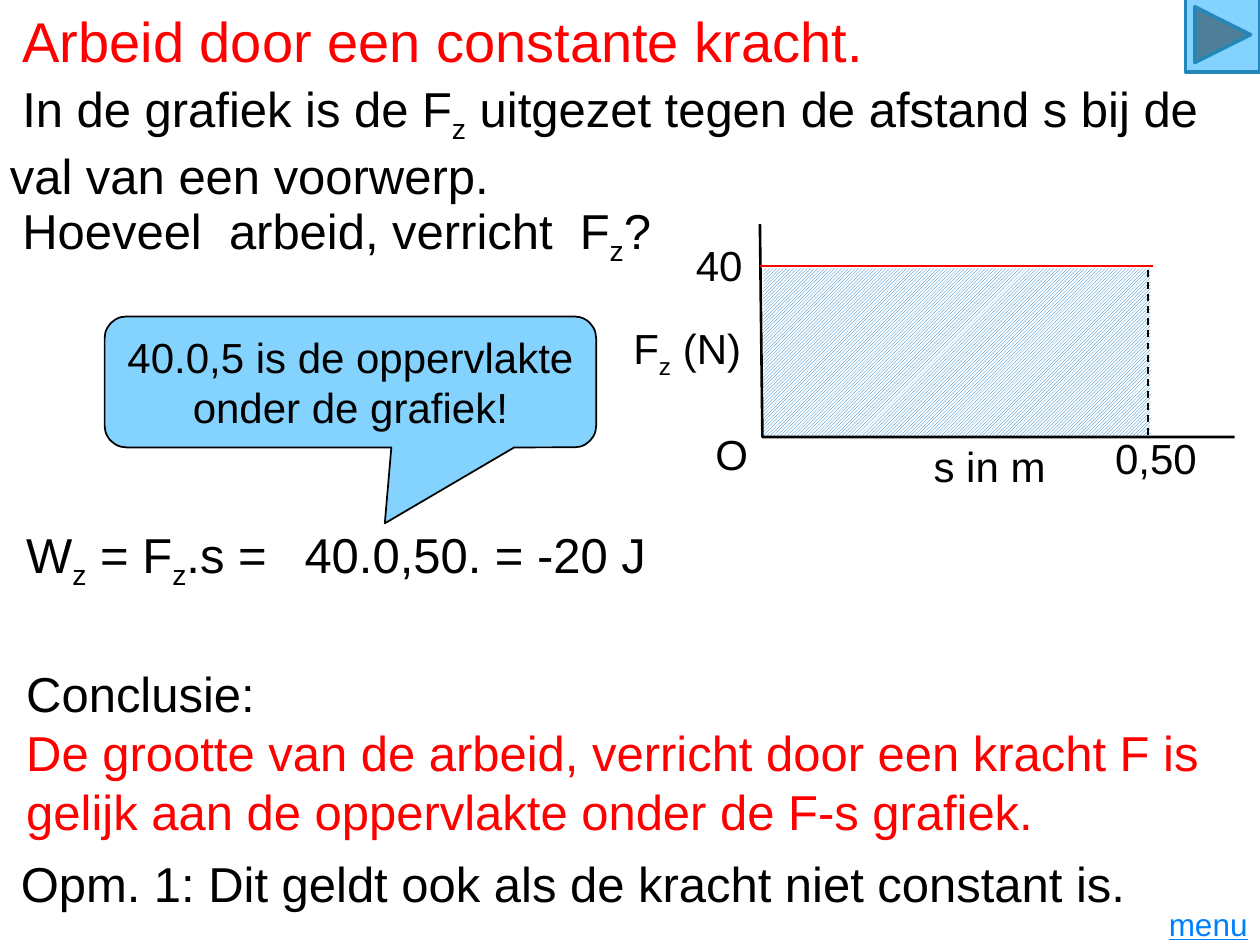
"""Build the slide on work done by a constant force."""
from dataclasses import dataclass

from lxml import etree
from pptx import Presentation
from pptx.dml.color import RGBColor
from pptx.enum.dml import MSO_LINE, MSO_PATTERN
from pptx.enum.shapes import MSO_CONNECTOR, MSO_SHAPE
from pptx.enum.text import MSO_ANCHOR, MSO_AUTO_SIZE, PP_ALIGN
from pptx.oxml.ns import qn
from pptx.util import Cm, Length, Pt

LEFT, CENTER, RIGHT = PP_ALIGN.LEFT, PP_ALIGN.CENTER, PP_ALIGN.RIGHT
TOP, MIDDLE = MSO_ANCHOR.TOP, MSO_ANCHOR.MIDDLE
GROW = MSO_AUTO_SIZE.SHAPE_TO_FIT_TEXT
HATCH = MSO_PATTERN.LIGHT_UPWARD_DIAGONAL
DASH = MSO_LINE.DASH
STRAIGHT = MSO_CONNECTOR.STRAIGHT
RECTANGLE = MSO_SHAPE.RECTANGLE
CALLOUT = MSO_SHAPE.ROUNDED_RECTANGULAR_CALLOUT
FORWARD = MSO_SHAPE.ACTION_BUTTON_FORWARD_OR_NEXT
TITLE_ONLY = 5


@dataclass(frozen=True)
class Theme:
    """Fonts, type sizes and colours of the slide."""

    font: str = "Arial"
    title: Length = Pt(32)
    body: Length = Pt(28)
    label: Length = Pt(24)
    link: Length = Pt(18)
    indent: Length = Cm(0.25)
    black: RGBColor = RGBColor(0, 0, 0)
    white: RGBColor = RGBColor(255, 255, 255)
    red: RGBColor = RGBColor(255, 0, 0)
    hatch: RGBColor = RGBColor(0x00, 0x70, 0xC0)
    sky: RGBColor = RGBColor(0x83, 0xD3, 0xFE)
    edge: RGBColor = RGBColor(0x24, 0x87, 0xBB)
    menu: RGBColor = RGBColor(0x00, 0x80, 0xFF)


THEME = Theme()


@dataclass(frozen=True)
class Box:
    """Position and size in centimetres."""

    left: float
    top: float
    width: float
    height: float

    def lengths(self) -> tuple[Length, ...]:
        """Return the box as slide lengths."""
        return Cm(self.left), Cm(self.top), Cm(self.width), Cm(self.height)


@dataclass(frozen=True)
class Line:
    """A paragraph, with subscripts between underscores."""

    text: str
    color: RGBColor = THEME.black
    size: Length = THEME.body
    align: PP_ALIGN = LEFT
    indent: Length = THEME.indent
    underline: bool = False


@dataclass(frozen=True)
class TextBlock:
    """A text box and its paragraphs."""

    box: Box
    lines: tuple[Line, ...]


def label(left: float, top: float, width: float, text: str, align: PP_ALIGN = LEFT) -> TextBlock:
    """Describe one label of the graph."""
    line = Line(text, size=THEME.label, align=align, indent=Cm(0))
    return TextBlock(Box(left, top, width, 1.27), (line,))


TITLE = Line("Arbeid door een constante kracht.", THEME.red, THEME.title)
CALLOUT_LINE = Line("40.0,5 is de oppervlakte onder de grafiek!",
                    size=THEME.label, align=CENTER, indent=Cm(0))
TEXT_BLOCKS = (
    TextBlock(Box(-0.05, 3.91, 14.3, 1.45), (Line("Hoeveel  arbeid, verricht  F_z_?"),)),
    TextBlock(Box(-0.05, 1.45, 25.45, 2.64), (
        Line("In de grafiek is de F_z_ uitgezet tegen de afstand s bij de val van een voorwerp."),)),
    TextBlock(Box(0.03, 10.44, 8.81, 1.45), (Line("W_z_ = F_z_.s ="),)),
    TextBlock(Box(5.89, 10.44, 11.73, 1.45), (Line("40.0,50. = -20 J", indent=Cm(0)),)),
    TextBlock(Box(0.03, 13.26, 25.45, 3.84), (
        Line("Conclusie:"),
        Line("De grootte van de arbeid, verricht door een kracht F is", THEME.red),
        Line("gelijk aan de oppervlakte onder de F-s grafiek.", THEME.red))),
    TextBlock(Box(-0.08, 17.09, 23.47, 1.45), (
        Line("Opm. 1: Dit geldt ook als de kracht niet constant is."),)),
    label(12.19, 6.38, 3, "F_z_ (N)", RIGHT),
    label(18.57, 8.76, 3.23, "s in m"),
    label(11.99, 4.7, 3.23, "40", RIGHT),
    label(22.23, 8.59, 2.67, "0,50"),
    label(14.17, 8.51, 3.23, "O"),
    TextBlock(Box(22.71, 18.11, 2.69, 1.02), (
        Line("menu", THEME.menu, THEME.link, RIGHT, Cm(0), True),)),
)


def write_lines(frame, lines: tuple[Line, ...], anchor: MSO_ANCHOR = TOP) -> None:
    """Fill a text frame with formatted paragraphs."""
    frame.word_wrap = True
    frame.auto_size = GROW
    frame.vertical_anchor = anchor
    for index, line in enumerate(lines):
        paragraph = frame.add_paragraph() if index else frame.paragraphs[0]
        paragraph.alignment = line.align
        paragraph._p.get_or_add_pPr().set("indent", str(line.indent))
        font = paragraph.font
        font.name, font.size, font.color.rgb = THEME.font, line.size, line.color
        if line.underline:
            font.underline = True
        for position, part in enumerate(line.text.split("_")):
            run = paragraph.add_run()
            run.text = part
            if position % 2:
                run._r.get_or_add_rPr().set("baseline", "-25000")


def add_filled_shape(slide, kind: MSO_SHAPE, box: Box, edge: RGBColor, width: Length):
    """Add a sky-blue preset shape with an outline."""
    shape = slide.shapes.add_shape(kind, *box.lengths())
    shape.shadow.inherit = False
    shape.fill.solid()
    shape.fill.fore_color.rgb = THEME.sky
    shape.line.color.rgb = edge
    shape.line.width = width
    return shape


def add_guide(slide, start: tuple[float, float], end: tuple[float, float], color: RGBColor):
    """Add a thin straight line of the graph."""
    guide = slide.shapes.add_connector(STRAIGHT, *map(Cm, start + end))
    guide.line.color.rgb = color
    guide.line.width = Pt(1)
    etree.SubElement(guide._element.spPr, qn("a:effectLst"))
    return guide


def add_graph(slide) -> None:
    """Draw the hatched area, the axes and the guides."""
    area = slide.shapes.add_shape(RECTANGLE, *Box(15.39, 5.41, 7.8, 3.4).lengths())
    area.shadow.inherit = False
    area.fill.patterned()
    area.fill.pattern = HATCH
    area.fill.fore_color.rgb = THEME.hatch
    area.fill.back_color.rgb = THEME.white
    area.line.fill.background()

    builder = slide.shapes.build_freeform(Cm(15.32), Cm(4.52))
    corners = ((15.37, 8.81), (24.89, 8.81))
    builder.add_line_segments([(Cm(x), Cm(y)) for x, y in corners], close=False)
    axes = builder.convert_to_shape()
    axes.shadow.inherit = False
    axes.fill.background()
    axes.line.color.rgb = THEME.black
    axes.line.width = Pt(1.5)

    add_guide(slide, (15.32, 5.36), (23.24, 5.36), THEME.red)
    add_guide(slide, (23.14, 8.76), (23.14, 5.36), THEME.black).line.dash_style = DASH


def main() -> None:
    """Build and save the presentation."""
    presentation = Presentation()
    presentation.slide_width, presentation.slide_height = Cm(25.4), Cm(19.05)
    slide = presentation.slides.add_slide(presentation.slide_layouts[TITLE_ONLY])
    title = slide.shapes.title
    title.left, title.top, title.width, title.height = Box(-0.05, 0, 23.5, 1.63).lengths()
    write_lines(title.text_frame, (TITLE,))

    add_graph(slide)
    add_filled_shape(slide, FORWARD, Box(23.9, -0.05, 1.5, 1.5), THEME.edge, Pt(2))
    callout = add_filled_shape(slide, CALLOUT, Box(2.11, 6.38, 9.91, 2.64), THEME.black, Pt(1))
    callout.adjustments[0], callout.adjustments[1] = 0.07, 1.08
    write_lines(callout.text_frame, (CALLOUT_LINE,), MIDDLE)
    for block in TEXT_BLOCKS:
        write_lines(slide.shapes.add_textbox(*block.box.lengths()).text_frame, block.lines)
    presentation.save("out.pptx")


if __name__ == "__main__":
    main()
